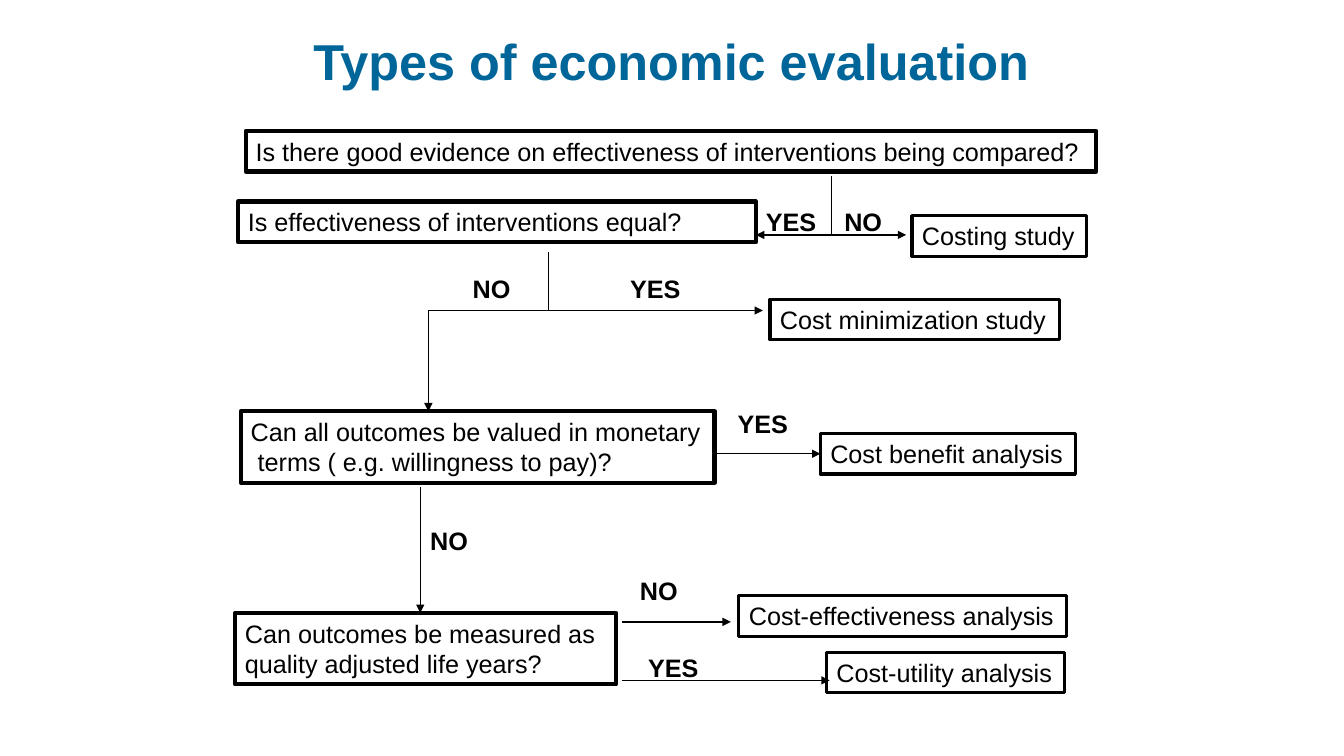
import pptx
import pptx.dml.color
import pptx.enum.shapes
import pptx.enum.text
import pptx.util
from lxml import etree
from pptx.oxml.ns import qn

Pt = pptx.util.Pt
RGBColor = pptx.dml.color.RGBColor
ALIGN = pptx.enum.text.PP_ALIGN
ANCHOR = pptx.enum.text.MSO_ANCHOR
AUTO = pptx.enum.text.MSO_AUTO_SIZE

TITLE_BLUE = RGBColor(0x00, 0x66, 0x99)
BLACK = RGBColor(0x00, 0x00, 0x00)
FONT = "Arial"
ONE_LINE, TWO_LINES = 29, 51
LABEL_WIDTH = {"YES": 50.5, "NO": 42}


def write(tf, *lines, size=18, bold=False, color=BLACK, align=ALIGN.LEFT,
          anchor=ANCHOR.TOP, wrap=False, auto_size=AUTO.SHAPE_TO_FIT_TEXT):
    tf.word_wrap = wrap
    tf.auto_size = auto_size
    tf.vertical_anchor = anchor
    for i, line in enumerate(lines):
        p = tf.add_paragraph() if i else tf.paragraphs[0]
        p.alignment = align
        r = p.add_run()
        r.text = line
        r.font.name = FONT
        r.font.size = Pt(size)
        r.font.bold = bold
        r.font.color.rgb = color


def add_box(slide, x, y, w, *lines, border=2.25):
    h = ONE_LINE if len(lines) == 1 else TWO_LINES
    sp = slide.shapes.add_shape(pptx.enum.shapes.MSO_SHAPE.RECTANGLE,
                                Pt(x), Pt(y), Pt(w), Pt(h))
    sp.shadow.inherit = False
    sp.fill.background()
    sp.line.color.rgb = BLACK
    sp.line.width = Pt(border)
    write(sp.text_frame, *lines)
    return sp


def add_question(slide, x, y, w, *lines):
    return add_box(slide, x, y, w, *lines, border=3)


def add_answer(slide, x, y, text):
    sp = slide.shapes.add_textbox(Pt(x), Pt(y), Pt(LABEL_WIDTH[text]), Pt(ONE_LINE))
    write(sp.text_frame, text, bold=True)


def add_line(slide, x1, y1, x2, y2, arrow=True):
    c = slide.shapes.add_connector(pptx.enum.shapes.MSO_CONNECTOR.STRAIGHT,
                                   Pt(x1), Pt(y1), Pt(x2), Pt(y2))
    c.line.color.rgb = BLACK
    c.line.width = Pt(1)
    if arrow:
        etree.SubElement(c.line._get_or_add_ln(), qn("a:tailEnd"), type="triangle")
    etree.SubElement(c._element.spPr, qn("a:effectLst"))
    return c


def add_title(slide, x, y, w, h):
    title = slide.shapes.title
    title.left, title.top, title.width, title.height = Pt(x), Pt(y), Pt(w), Pt(h)
    write(title.text_frame, "Types of economic evaluation", size=36, bold=True,
          color=TITLE_BLUE, align=ALIGN.CENTER, anchor=ANCHOR.MIDDLE, wrap=True,
          auto_size=AUTO.NONE)


def add_evidence_step(slide, x, y, w):
    add_question(slide, x, y, w, "Is there good evidence on effectiveness of "
                 "interventions being compared?")
    fork_x, fork_y = x + 418.5, y + 74.2
    add_line(slide, fork_x, y + 32.4, fork_x, fork_y, arrow=False)
    add_line(slide, fork_x, fork_y, fork_x - 54, fork_y)
    add_line(slide, fork_x, fork_y, fork_x + 53.3, fork_y)
    add_answer(slide, fork_x - 54, y + 50, "YES")
    add_answer(slide, fork_x + 2, y + 50, "NO")
    add_box(slide, x + 476, y + 60.4, 124.6, "Costing study")


def add_equality_step(slide, x, y, w):
    add_question(slide, x, y, w, "Is effectiveness of interventions equal?")
    fork_x, fork_y, no_x = x + 221.7, y + 77.8, x + 136
    add_line(slide, fork_x, y + 36, fork_x, fork_y, arrow=False)
    add_line(slide, fork_x, fork_y, x + 375, fork_y)
    add_line(slide, fork_x, fork_y, no_x, fork_y, arrow=False)
    add_line(slide, no_x, fork_y, no_x, y + 149.8)
    add_answer(slide, x + 160.6, y + 47.5, "NO")
    add_answer(slide, x + 273, y + 47.5, "YES")
    add_box(slide, x + 380, y + 69.8, 206.6, "Cost minimization study")


def add_monetary_step(slide, x, y, w):
    add_question(slide, x, y, w, "Can all outcomes be valued in monetary",
                 " terms ( e.g. willingness to pay)?")
    benefit = add_box(slide, x + 414, y + 15.8, 182.2, "Cost benefit analysis")
    yes_y = y + 15.8 + ONE_LINE / 2
    add_line(slide, x + w, yes_y, x + 414, yes_y).end_connect(benefit, 1)
    add_answer(slide, x + 347.8, y - 5.8, "YES")
    no_x = x + 128.2
    add_line(slide, no_x, y + 54, no_x, y + 144)
    add_answer(slide, no_x, y + 77.7, "NO")


def add_quality_step(slide, x, y, w):
    add_question(slide, x, y, w, "Can outcomes be measured as",
                 "quality adjusted life years?")
    start = x + w + 4.2
    add_line(slide, start, y + 6.4, x + 354.2, y + 6.4)
    add_line(slide, start, y + 48.2, x + 424.8, y + 48.2)
    add_answer(slide, x + 282.2, y - 30.3, "NO")
    add_answer(slide, x + 288, y + 24.4, "YES")
    add_box(slide, x + 360, y - 12.3, 234, "Cost-effectiveness analysis")
    add_box(slide, x + 422.6, y + 28, 169.9, "Cost-utility analysis")


def main():
    prs = pptx.Presentation()
    prs.slide_width, prs.slide_height = Pt(960), Pt(540)
    slide = prs.slides.add_slide(prs.slide_layouts.get_by_name("Title Only"))
    add_title(slide, 196.6, 20.2, 566, 46)
    add_evidence_step(slide, 175.5, 93.6, 607.7)
    add_equality_step(slide, 170, 144, 370)
    add_monetary_step(slide, 172, 293.8, 338.4)
    add_quality_step(slide, 167.8, 437.8, 272.2)
    prs.save("out.pptx")


if __name__ == "__main__":
    main()
